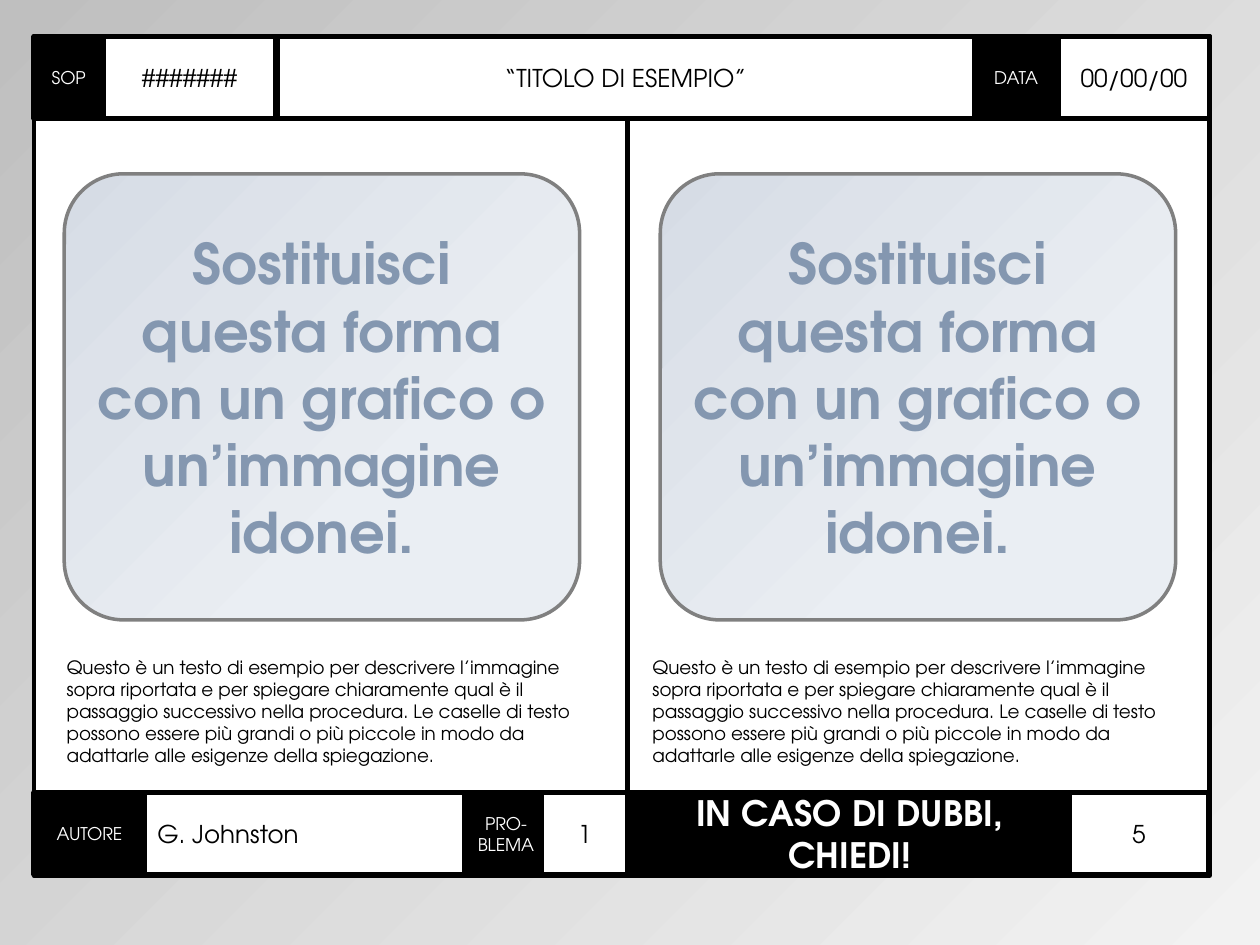
import pptx
import pptx.dml.color
import pptx.enum.shapes
import pptx.enum.text
import pptx.util
from lxml import etree

Inches = pptx.util.Inches
Pt = pptx.util.Pt
SHAPE = pptx.enum.shapes.MSO_SHAPE
ALIGN = pptx.enum.text.PP_ALIGN
ANCHOR = pptx.enum.text.MSO_ANCHOR
AUTO = pptx.enum.text.MSO_AUTO_SIZE
FONT = "TeX Gyre Adventor"
PROMPT = "Sostituisci questa forma con un grafico o un’immagine idonei."
CAPTION = (
    "Questo è un testo di esempio per descrivere l’immagine sopra riportata "
    "e per spiegare chiaramente qual è il passaggio successivo nella procedura. "
    "Le caselle di testo possono essere più grandi o più piccole in modo da "
    "adattarle alle esigenze della spiegazione."
)


def rgb(color):
    return pptx.dml.color.RGBColor.from_string(color)


def write(sp, text, size=14, color="000000", bold=False,
          align=ALIGN.CENTER, anchor=ANCHOR.MIDDLE, auto_size=AUTO.NONE):
    tf = sp.text_frame
    tf.word_wrap = True
    tf.auto_size = auto_size
    tf.vertical_anchor = anchor
    p = tf.paragraphs[0]
    p.alignment = align
    r = p.add_run()
    r.text = text
    r.font.name = FONT
    r.font.size = Pt(size)
    r.font.bold = bold
    r.font.color.rgb = rgb(color)


def gradient(fill, *stops):
    fill.gradient()
    fill.gradient_angle = 135
    for stop, (position, color) in zip(fill.gradient_stops, stops):
        stop.position = position
        stop.color.rgb = rgb(color)


def outline(sp, color="000000", width=2.75):
    sp.line.color.rgb = rgb(color)
    sp.line.width = Pt(width)


def add_box(s, x, y, w, h, fill=None, width=2.75, kind=SHAPE.RECTANGLE):
    sp = s.shapes.add_shape(kind, Inches(x), Inches(y), Inches(w), Inches(h))
    sp.shadow.inherit = False
    if fill:
        sp.fill.solid()
        sp.fill.fore_color.rgb = rgb(fill)
    else:
        sp.fill.background()
    outline(sp, width=width)
    return sp


def add_label(s, x, y, w, h, text, size=10, bold=False):
    sp = add_box(s, x, y, w, h, "000000", 3)
    write(sp, text, size=size, color="FFFFFF", bold=bold)


def add_value(s, x, y, w, h, text, align=ALIGN.CENTER):
    write(add_box(s, x, y, w, h, "FFFFFF"), text, align=align)


def add_title(s, x, y, w, h, text):
    sp = s.shapes.title
    sp.left, sp.top, sp.width, sp.height = map(Inches, (x, y, w, h))
    sp.fill.solid()
    sp.fill.fore_color.rgb = rgb("FFFFFF")
    outline(sp)
    write(sp, text)
    sp.element.getparent().append(sp.element)


def add_header(s, x, y, w, h):
    add_label(s, x, y, 0.55, h, "SOP")
    add_box(s, x, y, w, h)
    add_value(s, x + 0.55, y, 1.37, h, "#######")
    add_label(s, x + 7.46, y, 0.67, h, "DATA")
    add_value(s, x + 8.13, y, 1.2, h, "00/00/00")
    add_title(s, x + 1.93, y, 5.53, h, "“TITOLO DI ESEMPIO”")


def add_caption(s, x, y, w, h):
    sp = s.shapes.add_textbox(Inches(x), Inches(y), Inches(w), Inches(h))
    write(sp, CAPTION, size=10.5, align=ALIGN.LEFT, anchor=ANCHOR.TOP,
          auto_size=AUTO.SHAPE_TO_FIT_TEXT)


def add_card(s, x, y, w, h):
    sp = add_box(s, x, y, w, h, kind=SHAPE.ROUNDED_RECTANGLE)
    sp.adjustments[0] = 0.133
    gradient(sp.fill, (0.32, "EAEEF3"), (1, "D6DCE5"))
    outline(sp, "808080", 2)
    write(sp, PROMPT, size=32, color="8497B0", bold=True)


def add_divider(s, x, top, bottom):
    line = s.shapes.add_connector(
        pptx.enum.shapes.MSO_CONNECTOR.STRAIGHT,
        Inches(x), Inches(top), Inches(x), Inches(bottom))
    outline(line, width=3)
    etree.SubElement(line.element.spPr, pptx.oxml.ns.qn("a:effectLst"))


def add_steps(s, y, h):
    for caption_x, card_x in ((0.43, 0.51), (5.08, 5.24)):
        add_caption(s, caption_x, y + 4.22, 4.41, 0.98)
        add_card(s, card_x, y + 0.44, 4.09, 3.54)
    add_divider(s, 4.98, y, y + h)


def add_footer(s, x, y, h):
    add_label(s, x, y, 0.88, h, "AUTORE")
    add_value(s, x + 0.88, y, 2.56, h, "G. Johnston", ALIGN.LEFT)
    add_label(s, x + 4.73, y, 3.49, h, "IN CASO DI DUBBI, CHIEDI!", 20, True)
    add_value(s, x + 8.22, y, 1.1, h, "5")
    add_label(s, x + 3.42, y, 0.65, h, "PRO-BLEMA")
    add_value(s, x + 4.03, y, 0.68, h, "1")


def main():
    prs = pptx.Presentation()
    prs.slide_width, prs.slide_height = Inches(10), Inches(7.5)
    s = prs.slides.add_slide(prs.slide_layouts[5])
    gradient(s.background.fill, (0, "F2F2F2"), (1, "BFBFBF"))
    x, y, w, bar = 0.27, 0.29, 9.33, 0.65
    add_box(s, x, y, w, 6.66, "FFFFFF")
    add_header(s, x, y, w, bar)
    add_steps(s, y + bar, 5.35)
    add_footer(s, x, 6.29, bar)
    prs.save("out.pptx")


if __name__ == "__main__":
    main()
